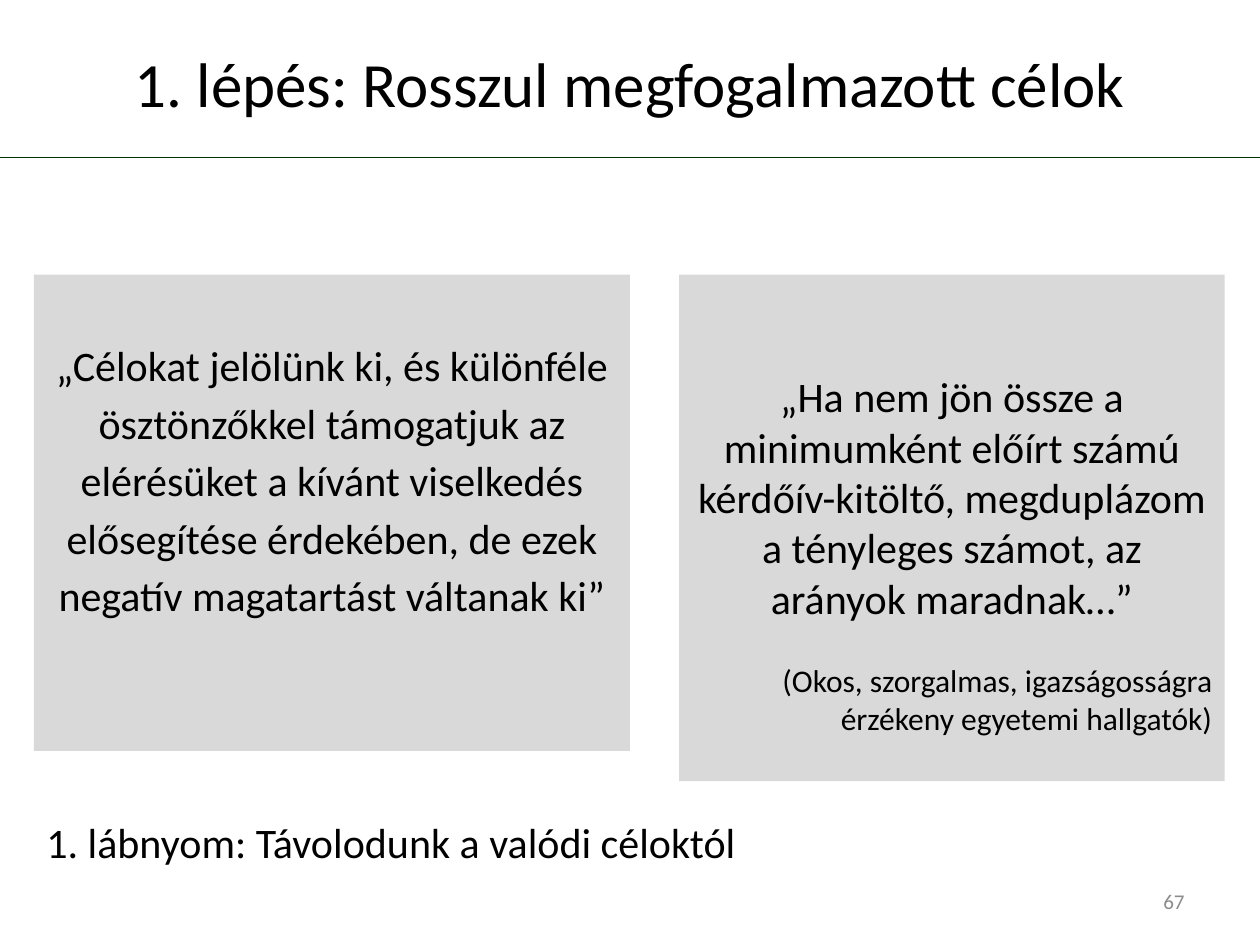
from lxml.etree import SubElement
from pptx import Presentation
from pptx.dml.color import RGBColor
from pptx.enum.shapes import MSO_CONNECTOR as Connector, MSO_SHAPE as Shape
from pptx.enum.text import MSO_ANCHOR as Anchor, PP_ALIGN as Align
from pptx.oxml.ns import qn
from pptx.util import Inches, Pt

BLACK = RGBColor(0x00, 0x00, 0x00)
GREEN = RGBColor(0x00, 0x33, 0x00)
PANEL_GREY = RGBColor(0xD9, 0xD9, 0xD9)
NUMBER_GREY = RGBColor(0x8C, 0x8C, 0x8C)

WIDTH, HEIGHT = 10, 7.5
MARGIN = 0.27
PANEL_TOP = 2.18
CONTENT_WIDTH = WIDTH - 2 * MARGIN
RIGHT_PANEL_WIDTH = 4.33


def write(frame, text, size=24, color=BLACK, align=Align.LEFT, before=0, spacing=None):
    """Write one paragraph, filling the empty first one before adding more."""
    first = frame.paragraphs[0]
    paragraph = frame.add_paragraph() if first.runs else first
    paragraph.alignment = align
    paragraph.space_before = Pt(before)
    if spacing:
        paragraph.line_spacing = spacing
    run = paragraph.add_run()
    run.text = text
    run.font.name = "Calibri"
    run.font.size = Pt(size)
    run.font.color.rgb = color


def add_rule(slide, y):
    """Draw the line that runs across the slide below the title."""
    rule = slide.shapes.add_connector(
        Connector.STRAIGHT, 0, Inches(y), Inches(WIDTH), Inches(y))
    rule.line.color.rgb = GREEN
    rule.line.width = Pt(1)
    SubElement(rule._element.spPr, qn("a:effectLst"))


def add_label(slide, left, top, width, height, text, anchor=Anchor.MIDDLE, **style):
    """Add a wrapping text box with one paragraph."""
    label = slide.shapes.add_textbox(*map(Inches, (left, top, width, height)))
    frame = label.text_frame
    frame.word_wrap = True
    frame.vertical_anchor = anchor
    write(frame, text, **style)


def add_panel(slide, left, width, height, anchor, insets):
    """Add a grey quotation panel and return its text frame."""
    panel = slide.shapes.add_shape(
        Shape.RECTANGLE, *map(Inches, (left, PANEL_TOP, width, height)))
    panel.shadow.inherit = False
    panel.fill.solid()
    panel.fill.fore_color.rgb = PANEL_GREY
    panel.line.fill.background()
    frame = panel.text_frame
    frame.word_wrap = True
    frame.vertical_anchor = anchor
    side, top, bottom = map(Inches, insets)
    frame.margin_left = frame.margin_right = side
    frame.margin_top, frame.margin_bottom = top, bottom
    return frame


def main():
    """Build the slide on badly worded goals."""
    deck = Presentation()
    deck.slide_width, deck.slide_height = Inches(WIDTH), Inches(HEIGHT)
    slide = deck.slides.add_slide(deck.slide_layouts[6])

    add_rule(slide, HEIGHT / 6)
    add_label(slide, 0.5, 0.3, WIDTH - 1, 0.7,
              "1. lépés: Rosszul megfogalmazott célok", size=36, align=Align.CENTER)

    example = add_panel(slide, WIDTH - MARGIN - RIGHT_PANEL_WIDTH - 0.01,
                        RIGHT_PANEL_WIDTH, 4.02, Anchor.MIDDLE, (0.1, 0.46, 0.05))
    write(example, "„Ha nem jön össze a minimumként előírt számú kérdőív-kitöltő, "
          "megduplázom a tényleges számot, az arányok maradnak…”", align=Align.CENTER)
    write(example, "(Okos, szorgalmas, igazságosságra érzékeny egyetemi hallgatók)",
          size=18, align=Align.RIGHT, before=22)

    principle = add_panel(slide, MARGIN, CONTENT_WIDTH / 2, 3.78,
                          Anchor.TOP, (0, 0.46, 0))
    write(principle, "„Célokat jelölünk ki, és különféle ösztönzőkkel támogatjuk az "
          "elérésüket a kívánt viselkedés elősegítése érdekében, de ezek negatív "
          "magatartást váltanak ki”", align=Align.CENTER, spacing=1.14)

    add_label(slide, MARGIN, 6.43, CONTENT_WIDTH, 0.5,
              "1. lábnyom: Távolodunk a valódi céloktól", anchor=Anchor.TOP)
    add_label(slide, 7.17, 6.95, 2.33, 0.4, "67",
              size=12, color=NUMBER_GREY, align=Align.RIGHT)

    deck.save("out.pptx")


if __name__ == "__main__":
    main()
